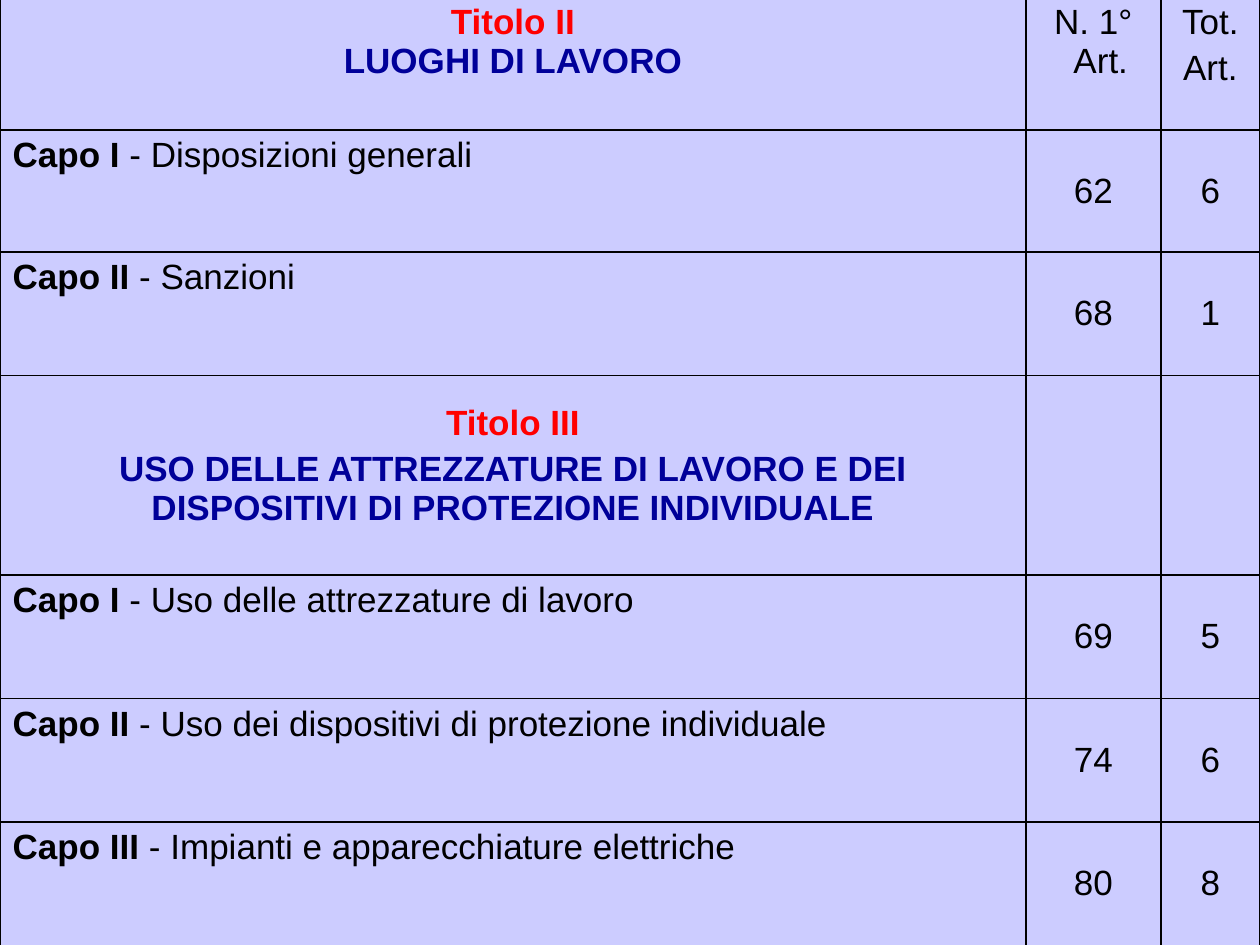
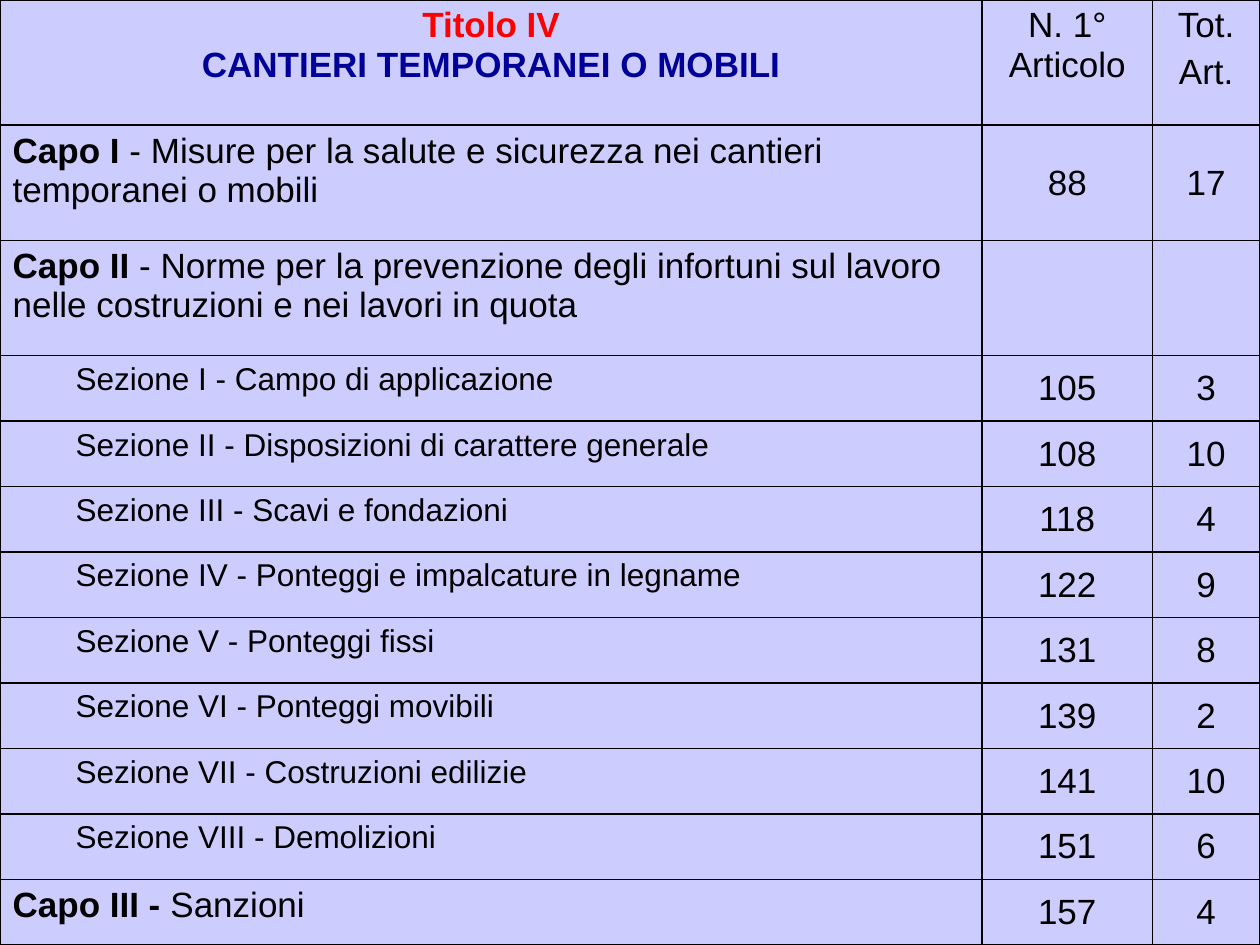
from dataclasses import dataclass

from lxml import etree
from pptx import Presentation
from pptx.dml.color import RGBColor
from pptx.enum.text import MSO_ANCHOR, PP_ALIGN
from pptx.oxml.ns import qn
from pptx.util import Cm, Pt

LEFT, CENTER = PP_ALIGN.LEFT, PP_ALIGN.CENTER
TOP, MIDDLE = MSO_ANCHOR.TOP, MSO_ANCHOR.MIDDLE
BLANK_LAYOUT = 6

# Each row: kind, height in cm, lead words, remaining words, first article, articles in total.
# A list in a cell holds one paragraph per item.
INDICES = [
    {
        "top": -0.08,
        "columns": (20.68, 2.72, 2.0),
        "header_hang": 0.3,
        "rows": [
            ("titolo", 2.7, "Titolo II", "LUOGHI DI LAVORO", ["N. 1° Art."], ["Tot.", "Art."]),
            ("capo", 2.46, "Capo I", " - Disposizioni generali", 62, 6),
            ("capo", 2.49, "Capo II", " - Sanzioni", 68, 1),
            ("titolo spaziato", 4.02, "Titolo III",
             "USO DELLE ATTREZZATURE DI LAVORO E DEI DISPOSITIVI DI PROTEZIONE INDIVIDUALE",
             None, None),
            ("capo", 2.49, "Capo I", " - Uso delle attrezzature di lavoro", 69, 5),
            ("capo", 2.49, "Capo II", " - Uso dei dispositivi di protezione individuale", 74, 6),
            ("capo", 2.49, "Capo III", " - Impianti e apparecchiature elettriche", 80, 8),
        ],
    },
    {
        "top": 0,
        "columns": (19.8, 3.43, 2.17),
        "header_hang": 0,
        "rows": [
            ("titolo", 2.52, "Titolo IV", "CANTIERI TEMPORANEI O MOBILI",
             ["N. 1° Articolo"], ["Tot.", "Art."]),
            ("capo", 2.33, "Capo I",
             " - Misure per la salute e sicurezza nei cantieri temporanei o mobili", 88, 17),
            ("capo", 2.32, "Capo II",
             " - Norme per la prevenzione degli infortuni sul lavoro nelle costruzioni"
             " e nei lavori in quota", None, None),
            ("sezione", 1.32, "Sezione I", " - Campo di applicazione", 105, 3),
            ("sezione", 1.32, "Sezione II", " - Disposizioni di carattere generale", 108, 10),
            ("sezione", 1.32, "Sezione III", " - Scavi e fondazioni", 118, 4),
            ("sezione", 1.32, "Sezione IV", " - Ponteggi e impalcature in legname", 122, 9),
            ("sezione", 1.32, "Sezione V", " - Ponteggi fissi", 131, 8),
            ("sezione", 1.32, "Sezione VI", " - Ponteggi movibili", 139, 2),
            ("sezione", 1.32, "Sezione VII", " - Costruzioni edilizie", 141, 10),
            ("sezione", 1.32, "Sezione VIII", " - Demolizioni", 151, 6),
            ("capo", 1.32, "Capo III - ", "Sanzioni", 157, 4),
        ],
    },
]


@dataclass(frozen=True)
class Theme:
    font: str = "Arial"
    text: str = "000000"
    titolo: str = "FF0000"
    subject: str = "000099"
    cell: str = "CCCCFF"
    border: str = "000000"
    border_width: int = Pt(1)
    body: int = Pt(20)
    sezione: int = Pt(18)
    paragraph_gap: int = Pt(4)
    spaced_top: int = Cm(0.57)
    sezione_left: int = Cm(2.06)
    sezione_hang: int = Cm(0.79)


THEME = Theme()


def add_run(paragraph, words, color=THEME.text, size=THEME.body, bold=False):
    run = paragraph.add_run()
    run.text = words
    for attribute, value in {"name": THEME.font, "size": size, "bold": bold}.items():
        setattr(run.font, attribute, value)
    run.font.color.rgb = RGBColor.from_string(color)


def next_paragraph(cell, align):
    """Return the empty first paragraph, or add one with a gap above it."""
    paragraph = cell.text_frame.paragraphs[0]
    if paragraph.runs:
        paragraph = cell.text_frame.add_paragraph()
        paragraph.space_before = THEME.paragraph_gap
    paragraph.alignment = align
    return paragraph


def hang(paragraph, left, depth):
    properties = paragraph._p.get_or_add_pPr()
    properties.set("marL", str(left))
    properties.set("indent", str(-depth))


def style_cell(cell):
    properties = cell._tc.get_or_add_tcPr()
    for side in ("a:lnL", "a:lnR", "a:lnT", "a:lnB"):
        line = etree.SubElement(properties, qn(side), w=str(THEME.border_width))
        fill = etree.SubElement(line, qn("a:solidFill"))
        etree.SubElement(fill, qn("a:srgbClr"), val=THEME.border)
    cell.fill.solid()
    cell.fill.fore_color.rgb = RGBColor.from_string(THEME.cell)


def write_heading(cell, kind, lead, rest):
    if kind.startswith("titolo"):
        paragraph = next_paragraph(cell, CENTER)
        add_run(paragraph, lead, THEME.titolo, bold=True)
        if kind == "titolo":
            paragraph.add_line_break()
        else:
            cell.margin_top = THEME.spaced_top
            paragraph = next_paragraph(cell, CENTER)
        add_run(paragraph, rest, THEME.subject, bold=True)
    elif kind == "capo":
        paragraph = next_paragraph(cell, LEFT)
        add_run(paragraph, lead, bold=True)
        add_run(paragraph, rest)
    else:
        paragraph = next_paragraph(cell, LEFT)
        paragraph.level = 1
        hang(paragraph, THEME.sezione_left, THEME.sezione_hang)
        add_run(paragraph, lead + rest, size=THEME.sezione)


def write_count(cell, count, header_hang):
    """Write an article number, or the lines of a column header."""
    if count is None:
        return
    is_header = isinstance(count, list)
    cell.vertical_anchor = TOP if is_header else MIDDLE
    for words in count if is_header else [str(count)]:
        paragraph = next_paragraph(cell, CENTER)
        if is_header and header_hang:
            hang(paragraph, header_hang, header_hang)
        add_run(paragraph, words)


def add_index(slide, index):
    rows, columns = index["rows"], index["columns"]
    table = slide.shapes.add_table(
        len(rows), len(columns), Cm(0), Cm(index["top"]),
        Cm(sum(columns)), Cm(sum(row[1] for row in rows))).table
    table.first_row = table.horz_banding = False
    for column, width in zip(table.columns, columns):
        column.width = Cm(width)
    for table_row, (kind, height, lead, rest, *counts) in zip(table.rows, rows):
        table_row.height = Cm(height)
        heading, *count_cells = table_row.cells
        for cell in (heading, *count_cells):
            style_cell(cell)
        write_heading(heading, kind, lead, rest)
        for cell, count in zip(count_cells, counts):
            write_count(cell, count, Cm(index["header_hang"]))


def main():
    presentation = Presentation()
    presentation.slide_width, presentation.slide_height = Cm(25.4), Cm(19.05)
    for index in INDICES:
        add_index(presentation.slides.add_slide(presentation.slide_layouts[BLANK_LAYOUT]), index)
    presentation.save("out.pptx")


if __name__ == "__main__":
    main()
